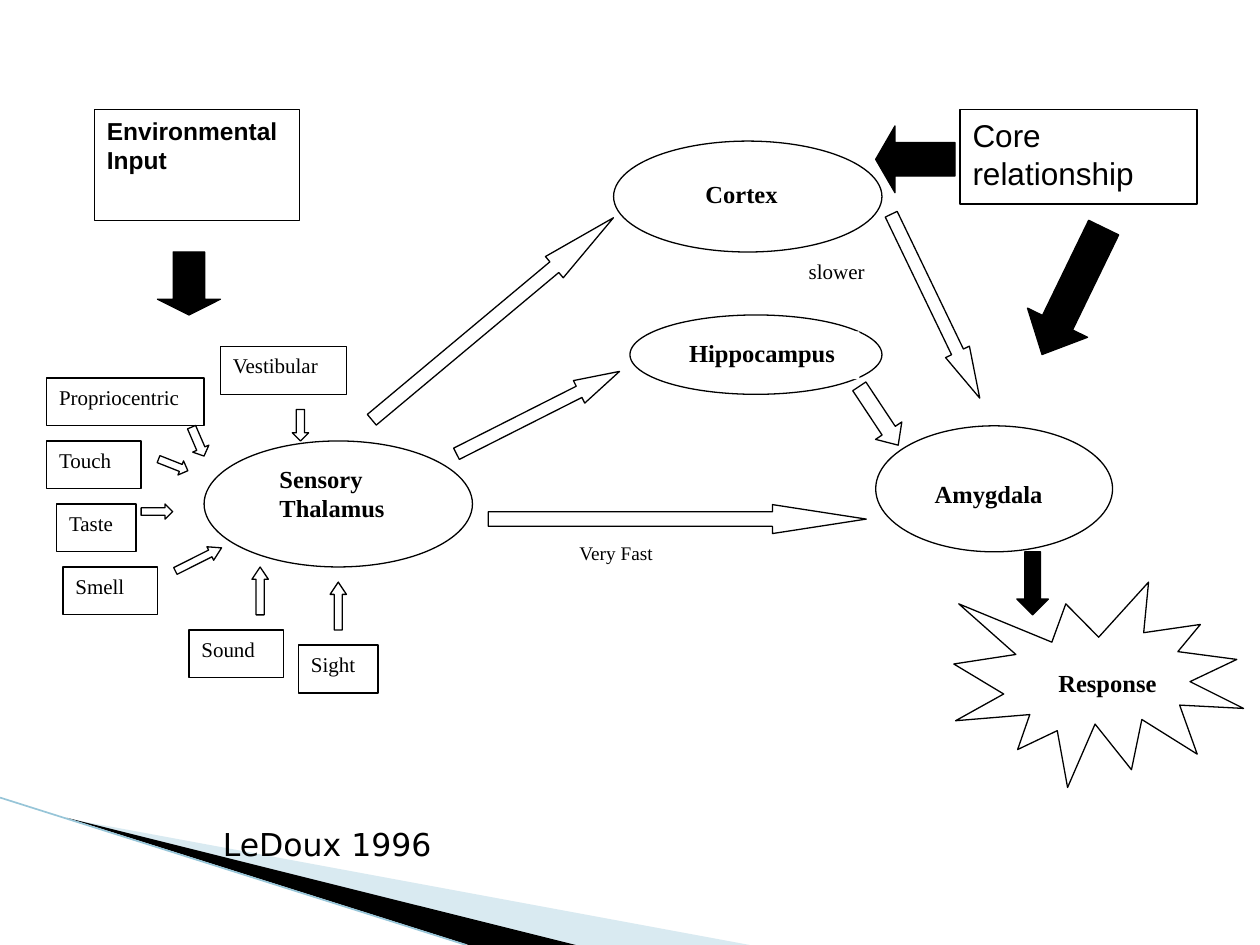
import pptx
import pptx.util
import pptx.dml.color
import pptx.enum.shapes
import pptx.enum.text
import pptx.oxml
import pptx.oxml.ns

Inches = pptx.util.Inches
Pt = pptx.util.Pt
RGBColor = pptx.dml.color.RGBColor
KIND = pptx.enum.shapes.MSO_SHAPE
QN = pptx.oxml.ns.qn

BLACK = RGBColor(0x00, 0x00, 0x00)
WHITE = RGBColor(0xFF, 0xFF, 0xFF)
PALE = RGBColor(0xA0, 0xCB, 0xDC)
EDGE = RGBColor(0x97, 0xC5, 0xD8)
SERIF = "Times New Roman"
SANS = "Arial"


def write(shape, text, size, font, bold=False):
    """Put one left-aligned run at the top of a shape."""
    frame = shape.text_frame
    frame.word_wrap = True
    frame.vertical_anchor = pptx.enum.text.MSO_ANCHOR.TOP
    par = frame.paragraphs[0]
    par.alignment = pptx.enum.text.PP_ALIGN.LEFT
    run = par.add_run()
    run.text = text
    run.font.size = Pt(size)
    run.font.name = font
    run.font.bold = bold
    run.font.color.rgb = BLACK


def draw(slide, box, kind, x, y, w, h, fill=WHITE, line=True):
    """Add a flat preset shape, offset from the corner of the box."""
    left, top = box
    shape = slide.shapes.add_shape(
        kind, Inches(left + x), Inches(top + y), Inches(w), Inches(h))
    shape.shadow.inherit = False
    shape.fill.solid()
    shape.fill.fore_color.rgb = fill
    if line:
        shape.line.color.rgb = BLACK
        shape.line.width = Pt(0.75)
    else:
        shape.line.fill.background()
    return shape


def arrow(slide, box, kind, x, y, w, h, head, turn=0, fill=WHITE):
    """Add a block arrow with a given head length and turn."""
    shape = draw(slide, box, kind, x, y, w, h, fill)
    shape.adjustments[0] = 0.5
    shape.adjustments[1] = head
    shape.rotation = turn


def label(slide, box, text, x, y, w, h, size=14, bold=True):
    """Add a white label without an outline."""
    shape = draw(slide, box, KIND.RECTANGLE, x, y, w, h, line=False)
    write(shape, text, size, SERIF, bold)
    return shape


def wedge(slide, box, points, fill):
    """Add a filled polygon and return it."""
    left, top = box
    spots = [(Inches(left + x), Inches(top + y)) for x, y in points]
    form = slide.shapes.build_freeform(*spots[0], scale=1.0)
    form.add_line_segments(spots[1:], close=True)
    shape = form.convert_to_shape()
    shape.shadow.inherit = False
    shape.fill.solid()
    shape.fill.fore_color.rgb = fill
    shape.line.fill.background()
    return shape


def corner(slide, box):
    """Place the wedges and the edge line at the lower left."""
    left, top = box
    pale = wedge(slide, box, [(0.55, 0.2), (5.95, 1.2), (4.56, 1.2)], PALE)
    tint = pale.fill._xPr.find(".//" + QN("a:srgbClr"))
    alpha = pptx.oxml.parse_xml(
        '<a:alpha xmlns:a="http://schemas.openxmlformats.org/drawingml/2006/main"'
        ' val="40000"/>')
    tint.append(alpha)
    wedge(slide, box, [(0.53, 0.19), (4.57, 1.2), (3.72, 1.2)], BLACK)
    line = slide.shapes.add_connector(
        pptx.enum.shapes.MSO_CONNECTOR.STRAIGHT,
        Inches(left), Inches(top + 0.03), Inches(left + 3.7), Inches(top + 1.2))
    line.line.color.rgb = EDGE
    line.line.width = Pt(0.95)
    line._element.spPr.append(pptx.oxml.parse_xml(
        '<a:effectLst xmlns:a="http://schemas.openxmlformats.org/drawingml/2006/main"/>'))


def senses(slide, box):
    """Place the input box, the senses and the thalamus."""
    entry = draw(slide, box, KIND.RECTANGLE, 0.38, 0, 1.63, 0.88)
    write(entry, "Environmental Input", 14, SANS, True)
    arrow(slide, box, KIND.DOWN_ARROW, 0.88, 1.13, 0.5, 0.5, 0.25, fill=BLACK)
    draw(slide, box, KIND.OVAL, 1.25, 2.63, 2.13, 1)
    label(slide, box, "Sensory Thalamus", 1.75, 2.76, 1.2, 0.62)

    column = [("Propriocentric", 0, 1.25), ("Touch", 0, 0.75),
              ("Taste", 0.08, 0.63), ("Smell", 0.13, 0.75)]
    items = [(text, x, 2.13 + 0.5 * row, w)
             for row, (text, x, w) in enumerate(column)]
    items += [("Vestibular", 1.38, 1.88, 1), ("Sound", 1.13, 4.13, 0.75),
              ("Sight", 2, 4.25, 0.63)]
    for text, x, y, w in items:
        sense = draw(slide, box, KIND.RECTANGLE, x, y, w, 0.38)
        write(sense, text, 12, SERIF)

    for part in [
        (KIND.DOWN_ARROW, 1.95, 2.38, 0.13, 0.25, 0.5),
        (KIND.DOWN_ARROW, 1.13, 2.51, 0.14, 0.25, 0.46, 336.7),
        (KIND.RIGHT_ARROW, 0.88, 2.76, 0.25, 0.12, 0.5, 21.6),
        (KIND.RIGHT_ARROW, 0.75, 3.13, 0.25, 0.12, 0.5),
        (KIND.RIGHT_ARROW, 1, 3.51, 0.41, 0.12, 0.83, 333.4),
        (KIND.UP_ARROW, 1.63, 3.63, 0.13, 0.38, 0.75),
        (KIND.UP_ARROW, 2.25, 3.75, 0.13, 0.38, 0.75),
    ]:
        arrow(slide, box, *part)


def brain(slide, box):
    """Place the brain areas and the slow and fast routes."""
    for part in [(1.12, 0.12, 2.13, 0.88), (1.25, 1.5, 2, 0.63),
                 (3.2, 2.38, 1.88, 1)]:
        draw(slide, box, KIND.OVAL, *part)
    label(slide, box, "Cortex", 1.75, 0.37, 0.88, 0.38)
    label(slide, box, "Hippocampus", 1.62, 1.63, 1.45, 0.38)
    label(slide, box, "Amygdala", 3.57, 2.75, 1.18, 0.38)
    for part in [
        (KIND.UP_ARROW, 0.05, 0.28, 0.22, 2.5, 2.78, 50.1),
        (KIND.UP_ARROW, 0.42, 1.55, 0.2, 1.45, 1.8, 63.2),
        (KIND.UP_ARROW, 1.51, 1.62, 0.23, 3, 3.24, 90),
        (KIND.DOWN_ARROW, 3.57, 0.62, 0.21, 1.62, 1.94, 334.3),
        (KIND.DOWN_ARROW, 3.1, 2.02, 0.25, 0.56, 0.55, 326.5),
    ]:
        arrow(slide, box, *part)
    label(slide, box, "Very Fast", 0.75, 3.25, 1.38, 0.37, 11, False)
    label(slide, box, "slower", 2.57, 1, 0.75, 0.37, 12, False)


def result(slide, box):
    """Place the core relationship and the response."""
    core = draw(slide, box, KIND.RECTANGLE, 0.67, 0, 1.88, 0.75)
    write(core, "Core relationship", 18, SANS)
    draw(slide, box, KIND.EXPLOSION1, 0.62, 3.75, 2.3, 1.63)
    reply = label(slide, box, "Response", 1.25, 4.38, 1.13, 0.37)
    reply.text_frame.margin_left = Inches(0.2)
    reply.text_frame.margin_right = Inches(0)
    for part in [
        (KIND.DOWN_ARROW, 1.3, 0.88, 0.53, 1.12, 0.53, 25.9),
        (KIND.LEFT_ARROW, 0, 0.13, 0.63, 0.53, 0.29),
        (KIND.DOWN_ARROW, 1.12, 3.51, 0.25, 0.5, 0.5),
    ]:
        arrow(slide, box, *part, fill=BLACK)


def credit(slide, box):
    """Place the source of the model."""
    left, top = box
    note = slide.shapes.add_textbox(
        Inches(left), Inches(top), Inches(5.75), Inches(0.4))
    write(note, "LeDoux 1996", 18, "DejaVu Sans")


def main():
    """Build and save the slide."""
    deck = pptx.Presentation()
    deck.slide_width = Inches(10)
    deck.slide_height = Inches(7.5)
    slide = deck.slides.add_slide(deck.slide_layouts[6])
    corner(slide, (0, 6.3))
    senses(slide, (0.37, 0.87))
    brain(slide, (3.75, 1))
    result(slide, (6.95, 0.87))
    credit(slide, (1.67, 6.5))
    deck.save("out.pptx")


if __name__ == "__main__":
    main()
